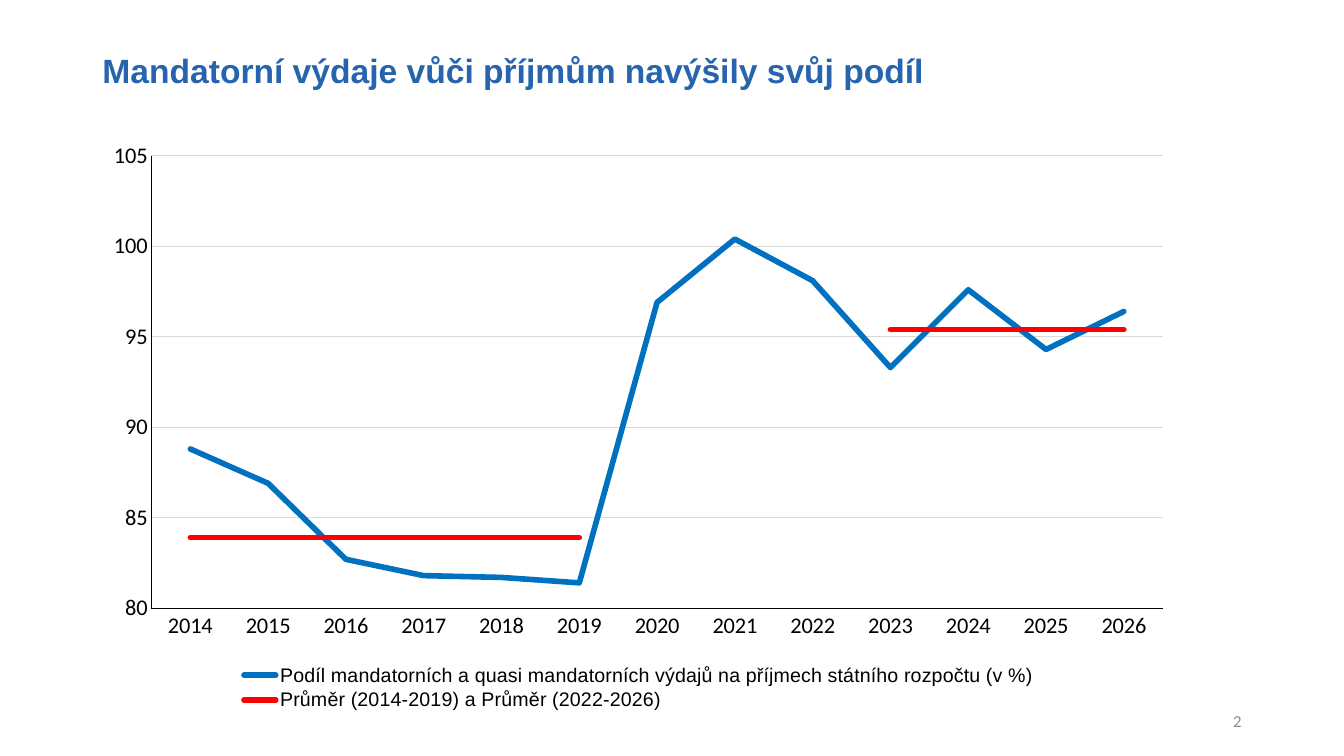
from lxml import etree
from pptx import Presentation
from pptx import util as u
from pptx.chart.data import CategoryChartData
from pptx.dml.color import RGBColor
from pptx.enum import chart as charts, text
from pptx.oxml.ns import qn

YEARS = [str(year) for year in range(2014, 2027)]
SHARE = [88.8, 86.9, 82.7, 81.8, 81.7, 81.4, 96.9, 100.4, 98.1, 93.3, 97.6, 94.3, 96.4]
AVERAGE = [83.9] * 6 + [None] * 3 + [95.4] * 4
SERIES = [
    ("Podíl mandatorních a quasi mandatorních výdajů na příjmech státního rozpočtu (v %)", SHARE, "0070C0"),
    ("Průměr (2014-2019) a Průměr (2022-2026)", AVERAGE, "FF0000"),
]


def color(value):
    """Turn a hex string into a colour."""
    return RGBColor.from_string(value)


def style_font(font, name, size, value, bold=False):
    """Set family, size, colour and weight of a font."""
    font.name, font.size, font.bold = name, u.Pt(size), bold
    font.color.rgb = color(value)


def style_line(line, value, width):
    """Set colour and width of a line."""
    line.color.rgb = color(value)
    line.width = u.Pt(width)


def place(shape, box):
    """Move a shape to a box given in points."""
    shape.left, shape.top, shape.width, shape.height = map(u.Pt, box)


def set_layout(parent, index, inner, **fractions):
    """Fix the place of a chart part as fractions of the chart."""
    for old in parent.findall(qn("c:layout")):
        parent.remove(old)
    layout = etree.Element(qn("c:layout"))
    manual = etree.SubElement(layout, qn("c:manualLayout"))
    settings = {"layoutTarget": "inner"} if inner else {}
    settings.update(xMode="edge", yMode="edge", **fractions)
    for name, value in settings.items():
        etree.SubElement(manual, qn("c:" + name)).set("val", str(value))
    parent.insert(index, layout)


def add_title(page, box):
    """Fill the title placeholder."""
    title = page.shapes.title
    place(title, box)
    frame = title.text_frame
    frame.text = "Mandatorní výdaje vůči příjmům navýšily svůj podíl"
    frame.vertical_anchor = text.MSO_ANCHOR.TOP
    frame.auto_size = text.MSO_AUTO_SIZE.NONE
    para = frame.paragraphs[0]
    para.alignment = text.PP_ALIGN.LEFT
    para.line_spacing = 0.9
    style_font(para.runs[0].font, "Arial", 24, "2764AE", True)


def style_axes(chart):
    """Format both axes and the gridlines."""
    for axis in (chart.category_axis, chart.value_axis):
        axis.major_tick_mark = axis.minor_tick_mark = charts.XL_TICK_MARK.NONE
        style_font(axis.tick_labels.font, "Calibri", 16, "000000")
        style_line(axis.format.line, "000000", 0.75)
    values = chart.value_axis
    values.minimum_scale, values.maximum_scale, values.major_unit = 80, 105, 5
    values.tick_labels.number_format = "0"
    values.tick_labels.number_format_is_linked = False
    style_line(values.major_gridlines.format.line, "D9D9D9", 0.75)


def add_share_chart(page, box):
    """Draw the share of spending and its averages as lines."""
    data = CategoryChartData(number_format="0.0")
    data.categories = YEARS
    for name, values, _ in SERIES:
        data.add_series(name, values)
    frame = page.shapes.add_chart(charts.XL_CHART_TYPE.LINE, *map(u.Pt, box), data)
    chart = frame.chart
    chart.has_title = False
    style_font(chart.font, "Calibri", 10, "000000")
    chart.plots[0].vary_by_categories = False
    style_axes(chart)
    for series, (_, _, value) in zip(chart.plots[0].series, SERIES):
        series.smooth = False
        series.marker.style = charts.XL_MARKER_STYLE.NONE
        style_line(series.format.line, value, 4)
    for line in chart.element.xpath("//c:ser/c:spPr/a:ln"):
        line.set("cap", "rnd")
    chart.has_legend = True
    chart.legend.position = charts.XL_LEGEND_POSITION.BOTTOM
    chart.legend.include_in_layout = False
    style_font(chart.legend.font, "Arial", 14, "000000")
    plot_area, legend = (chart.element.xpath("//c:" + name)[0] for name in ("plotArea", "legend"))
    set_layout(plot_area, 0, True, x=0.054, y=0.044, w=0.925, h=0.775)
    set_layout(legend, 1, False, x=0.13, y=0.91, w=0.74, h=0.09)


def add_page_number(page, box):
    """Write the page number at the lower right."""
    frame = page.shapes.add_textbox(*map(u.Pt, box)).text_frame
    frame.text = "2"
    frame.word_wrap = True
    frame.vertical_anchor = text.MSO_ANCHOR.MIDDLE
    para = frame.paragraphs[0]
    para.alignment = text.PP_ALIGN.RIGHT
    style_font(para.runs[0].font, "Calibri", 12, "8C8C8C")


def main():
    """Build and save the deck."""
    deck = Presentation()
    deck.slide_width, deck.slide_height = u.Pt(960), u.Pt(540)
    page = deck.slides.add_slide(deck.slide_layouts[5])
    add_page_number(page, (678, 500.5, 216, 28.75))
    add_share_chart(page, (66, 93, 781, 417))
    add_title(page, (66, 35, 861, 47.5))
    deck.save("out.pptx")


if __name__ == "__main__":
    main()
